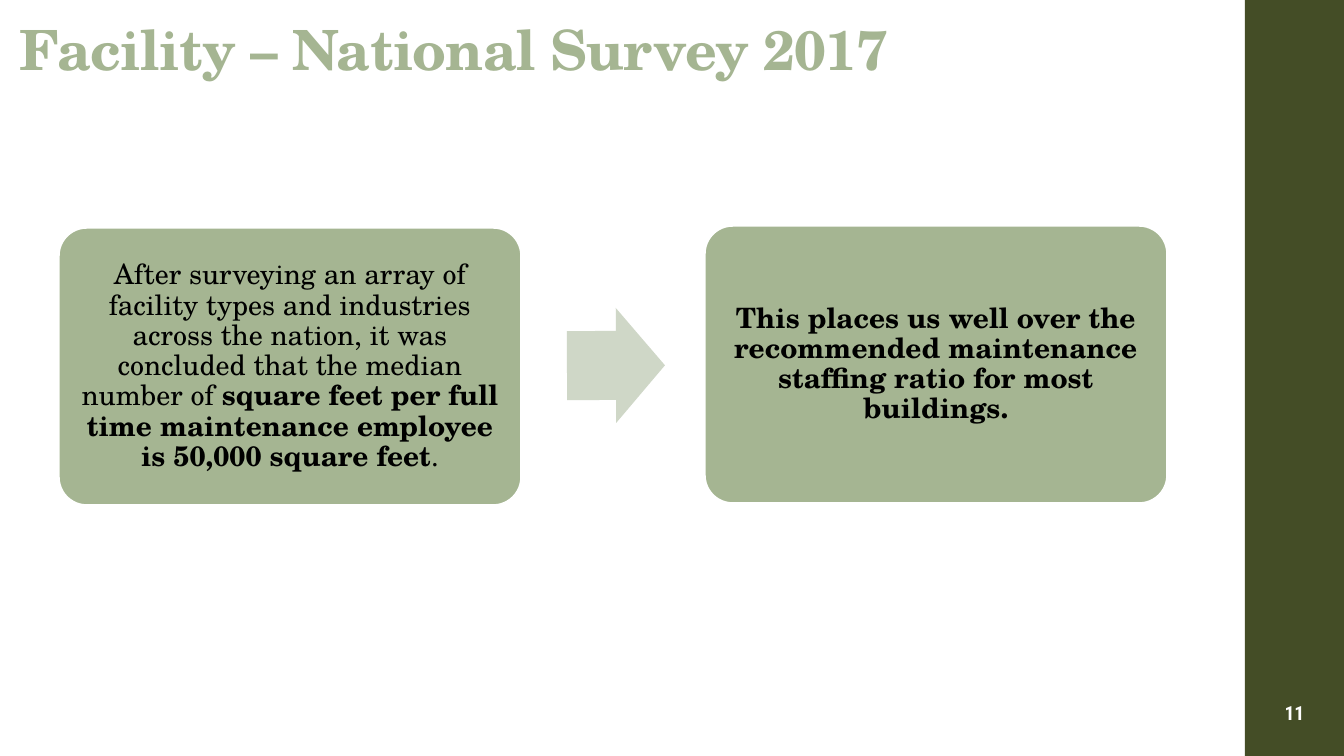
from pptx import Presentation
from pptx.dml.color import RGBColor
from pptx.enum.shapes import MSO_SHAPE as Shape
from pptx.enum.text import MSO_ANCHOR as Anchor, PP_ALIGN as Align
from pptx.util import Pt

EMU_PER_PX = 914400 / 100.8
SLIDE_WIDTH, SLIDE_HEIGHT = 1344, 756
BAND_LEFT = 1245
CARD_WIDTH, CARD_HEIGHT = 462, 277
SERIF, SANS = "TeX Gyre Schola", "Roboto Condensed"
COLORS = {
    "band": "444D26",
    "sage": "A5B592",
    "arrow": "CFD7C7",
    "white": "FFFFFF",
    "black": "000000",
}


def px(length):
    return round(length * EMU_PER_PX)


def color(name):
    return RGBColor.from_string(COLORS[name])


def add_block(page, kind, box, fill, line=None, adjustments=()):
    """Add a filled preset shape; box is left, top, width, height."""
    block = page.shapes.add_shape(kind, *map(px, box))
    block.shadow.inherit = False
    block.fill.solid()
    block.fill.fore_color.rgb = color(fill)
    if line:
        block.line.color.rgb = color(line)
        block.line.width = Pt(1.1)
    else:
        block.line.fill.background()
    for index, value in enumerate(adjustments):
        block.adjustments[index] = value
    return block


def write(shape, *pieces, size, fill, font=SERIF, align=Align.CENTER,
          anchor=Anchor.MIDDLE, margins=(5, 5, 5, 5), line_spacing=1.0, tracking=None):
    """Write one paragraph of (text, bold) pieces into a shape."""
    frame = shape.text_frame
    frame.word_wrap = True
    frame.vertical_anchor = anchor
    (frame.margin_left, frame.margin_top,
     frame.margin_right, frame.margin_bottom) = map(px, margins)
    para = frame.paragraphs[0]
    para.alignment = align
    para.line_spacing = line_spacing
    for text, bold in pieces:
        span = para.add_run()
        span.text = text
        span.font.name = font
        span.font.size = Pt(size)
        span.font.bold = bold
        span.font.color.rgb = color(fill)
        if tracking:
            span.font._element.set("spc", str(tracking))


def add_text(page, box, *pieces, **style):
    write(page.shapes.add_textbox(*map(px, box)), *pieces, **style)


def add_card(page, left, top, *pieces):
    card = add_block(page, Shape.ROUNDED_RECTANGLE, (left, top, CARD_WIDTH, CARD_HEIGHT),
                     "sage", line="white", adjustments=[0.1])
    # The preset insets its text by about 8 px at the rounded corners
    write(card, *pieces, size=20, fill="black", margins=(8, 8, 8, 8), line_spacing=0.9)


def main():
    deck = Presentation()
    deck.slide_width, deck.slide_height = px(SLIDE_WIDTH), px(SLIDE_HEIGHT)
    page = deck.slides.add_slide(deck.slide_layouts[6])

    # Side band and title
    band_width = SLIDE_WIDTH - BAND_LEFT
    add_block(page, Shape.RECTANGLE, (BAND_LEFT, 0, band_width, SLIDE_HEIGHT), "band")
    add_text(page, (10, 12, 1068, 75), ("Facility – National Survey 2017", True),
             size=39.6, fill="sage", align=Align.LEFT, anchor=Anchor.BOTTOM,
             margins=(10, 3, 10, 5), line_spacing=0.9, tracking=-50)

    # Finding, arrow, conclusion
    add_card(page, 59, 228,
             ("After surveying an array of facility types and industries across the nation, "
              "it was concluded that the median number of ", False),
             ("square feet per full time maintenance employee is 50,000 square feet", True),
             (".", False))
    arrow = add_block(page, Shape.RIGHT_ARROW, (567, 308, 98, 115), "arrow",
                      adjustments=[0.6, 0.5])
    arrow.rotation = 359.8
    add_card(page, 705, 226,
             ("This places us well over the recommended maintenance staffing ratio "
              "for most buildings.", True))

    # Page number
    add_text(page, (BAND_LEFT, 680, band_width, 66), ("11", True),
             size=14, fill="white", font=SANS)

    deck.save("out.pptx")


if __name__ == "__main__":
    main()
